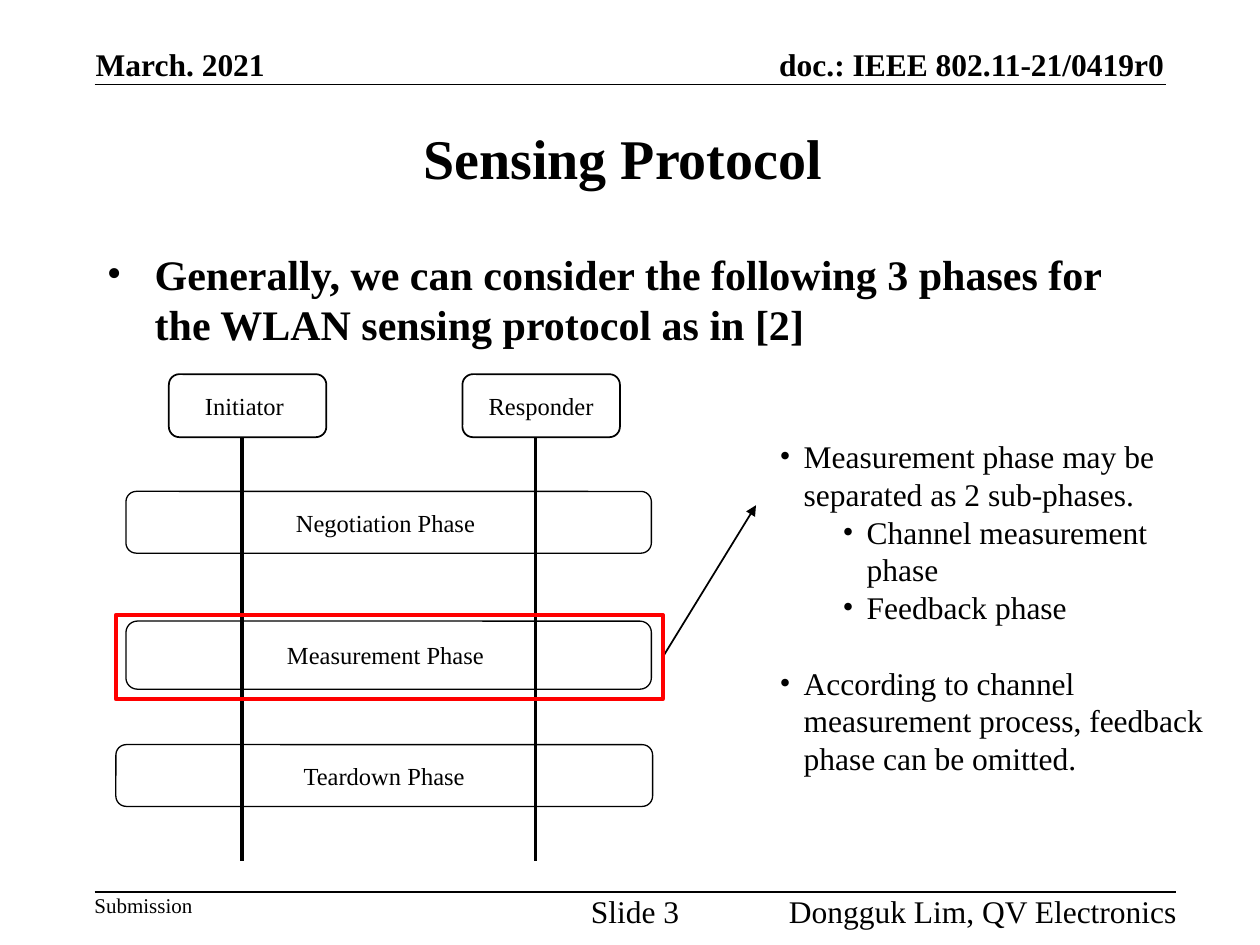
from lxml import etree
from pptx import Presentation
from pptx.dml.color import RGBColor
from pptx.enum import shapes, text
from pptx.oxml.ns import qn
from pptx.util import Inches, Pt

BLACK = RGBColor(0, 0, 0)
RED = RGBColor(255, 0, 0)
FONT = "Times New Roman"
LEFT, CENTER, RIGHT = text.PP_ALIGN.LEFT, text.PP_ALIGN.CENTER, text.PP_ALIGN.RIGHT
TOP, MIDDLE, BOTTOM = text.MSO_ANCHOR.TOP, text.MSO_ANCHOR.MIDDLE, text.MSO_ANCHOR.BOTTOM


def write(paragraph, words, size, bold=False, align=LEFT):
    paragraph.alignment = align
    run = paragraph.add_run()
    run.text = words
    for name, value in {"name": FONT, "size": Pt(size), "bold": bold}.items():
        setattr(run.font, name, value)
    run.font.color.rgb = BLACK


def add_bullet(paragraph, indent, hanging):
    props = paragraph._p.get_or_add_pPr()
    props.set("marL", str(Inches(indent)))
    props.set("indent", str(-Inches(hanging)))
    etree.SubElement(props, qn("a:buFont")).set("typeface", FONT)
    etree.SubElement(props, qn("a:buChar")).set("char", "•")


def add_text_frame(slide, box, anchor=TOP, wrap=True, inset=(0.1, 0.05)):
    frame = slide.shapes.add_textbox(*map(Inches, box)).text_frame
    across, down = map(Inches, inset)
    settings = {"word_wrap": wrap, "vertical_anchor": anchor,
                "margin_left": across, "margin_right": across,
                "margin_top": down, "margin_bottom": down}
    for name, value in settings.items():
        setattr(frame, name, value)
    return frame


def add_line(slide, start, end, width=1, arrow=False):
    line = slide.shapes.add_connector(
        shapes.MSO_CONNECTOR.STRAIGHT, *map(Inches, (*start, *end)))
    line.line.color.rgb = BLACK
    line.line.width = Pt(width)
    if arrow:
        etree.SubElement(line.line._get_or_add_ln(), qn("a:tailEnd")).set("type", "triangle")
    etree.SubElement(line._element.spPr, qn("a:effectLst"))


def add_outline(slide, kind, box, color=BLACK, width=1, label=""):
    outline = slide.shapes.add_shape(kind, *map(Inches, box))
    outline.shadow.inherit = False
    outline.fill.background()
    outline.line.color.rgb = color
    outline.line.width = Pt(width)
    if label:
        outline.text_frame.vertical_anchor = MIDDLE
        write(outline.text_frame.paragraphs[0], label, 14, align=CENTER)


def add_margin_texts(slide, entries, top, anchor, bold=False):
    """Place one-line header or footer texts given as (words, left, width, size, align)."""
    for words, left, width, size, align in entries:
        frame = add_text_frame(slide, (left, top, width, 0.3), anchor, False, (0, 0))
        write(frame.paragraphs[0], words, size, bold, align)


def add_header(slide, left, top):
    add_margin_texts(slide, [
        ("March. 2021", left + 0.01, 1.5, 18, LEFT),
        ("doc.: IEEE 802.11-21/0419r0", left + 4.89, 3.6, 18, RIGHT),
    ], top, BOTTOM, True)
    add_line(slide, (left, top + 0.31), (left + 8.5, top + 0.31))


def add_footer(slide, left, top):
    add_line(slide, (left, top), (left + 8.58, top))
    add_margin_texts(slide, [
        ("Submission", left, 1, 12, LEFT),
        ("Slide 3", left + 3.79, 1, 18, CENTER),
        ("Dongguk Lim, QV Electronics", left + 5.09, 3.5, 18, RIGHT),
    ], top, TOP)


def add_title(slide, box):
    write(add_text_frame(slide, box, MIDDLE).paragraphs[0],
          "Sensing Protocol ", 32, True, CENTER)


def add_statement(slide, box):
    statement = add_text_frame(slide, box).paragraphs[0]
    write(statement, "Generally, we can consider the following 3 phases for "
          "the WLAN sensing protocol as in [2]", 24, True)
    statement.space_before = Pt(4.8)
    add_bullet(statement, 0.38, 0.38)


def add_sequence(slide, left, top):
    """Draw both stations, their lifelines and the three phases."""
    rounded = shapes.MSO_SHAPE.ROUNDED_RECTANGLE
    station_height = 0.5
    for index, station in enumerate(("Initiator ", "Responder")):
        offset = left + 2.33 * index
        add_outline(slide, rounded, (offset + 0.42, top, 1.25, station_height), label=station)
        add_line(slide, (offset + 1, top + station_height), (offset + 1, top + 3.86), 2.25)

    for phase, x, y, width, height in (
            ("Negotiation Phase ", 0.08, 0.93, 4.17, 0.49),
            ("Measurement Phase ", 0.08, 1.96, 4.17, 0.54),
            ("Teardown Phase", 0, 2.94, 4.26, 0.49)):
        add_outline(slide, rounded, (left + x, top + y, width, height), width=0.75, label=phase)


def add_highlight(slide, box, arrow_end):
    left, top, width, height = box
    add_line(slide, (left + width, top + height / 2), arrow_end, arrow=True)
    add_outline(slide, shapes.MSO_SHAPE.RECTANGLE, box, RED, 2.25)


def add_remarks(slide, box):
    frame = add_text_frame(slide, box)
    remarks = (
        ("Measurement phase may be separated as 2 sub-phases.", 0, 0),
        ("Channel measurement phase", 1, 0),
        ("Feedback phase", 1, 0),
        ("According to channel measurement process, feedback phase can be omitted.", 0, 21.5),
    )
    for index, (words, level, gap) in enumerate(remarks):
        remark = frame.add_paragraph() if index else frame.paragraphs[0]
        write(remark, words, 18)
        remark.level = level
        remark.space_before = Pt(gap)
        add_bullet(remark, 0.19 + 0.5 * level, 0.19)


def main():
    deck = Presentation()
    deck.slide_width, deck.slide_height = Inches(10), Inches(7.5)
    slide = deck.slides.add_slide(deck.slide_layouts[6])
    add_header(slide, 0.75, 0.36)
    add_footer(slide, 0.75, 7.08)
    add_title(slide, (0.75, 0.75, 8.5, 1))
    add_statement(slide, (0.75, 1.92, 8.5, 4.75))
    add_sequence(slide, 0.92, 2.97)
    add_remarks(slide, (6.09, 3.42, 3.74, 3.13))
    add_highlight(slide, (0.92, 4.88, 4.34, 0.67), (6, 4.01))
    deck.save("out.pptx")


if __name__ == "__main__":
    main()
